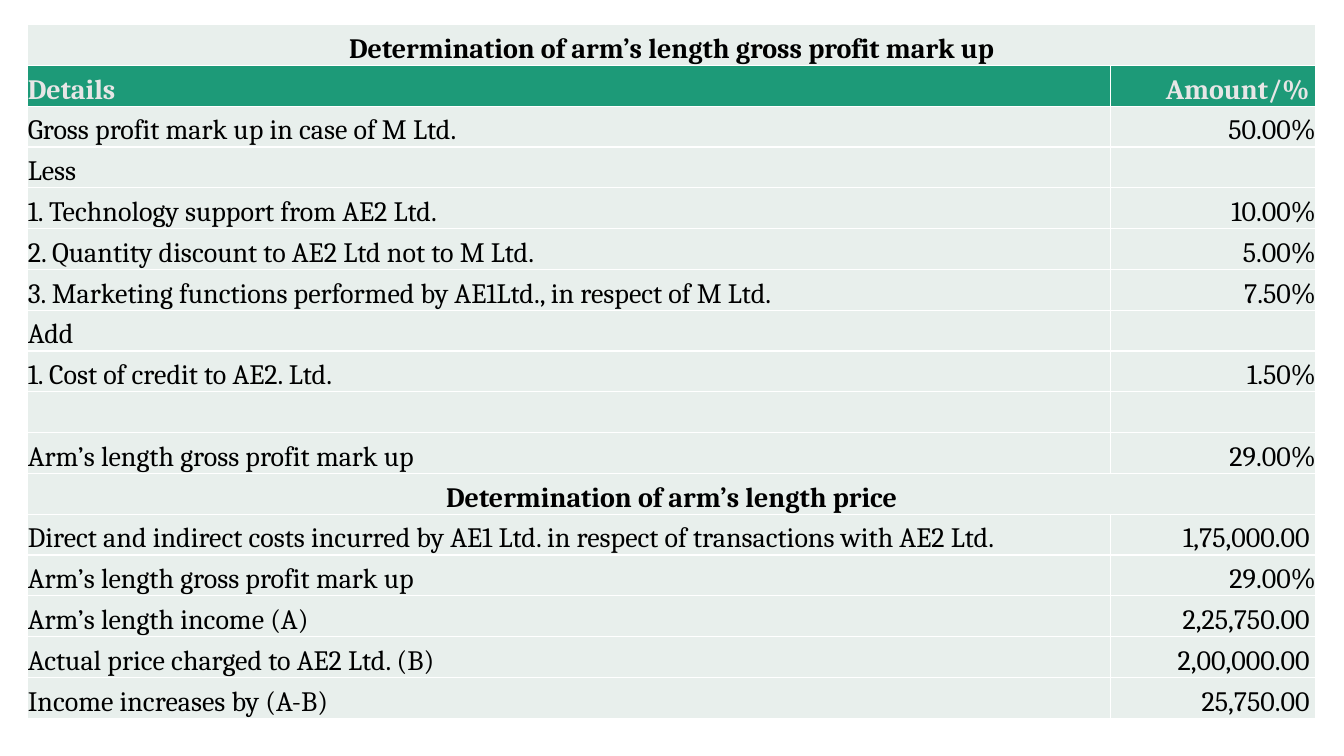
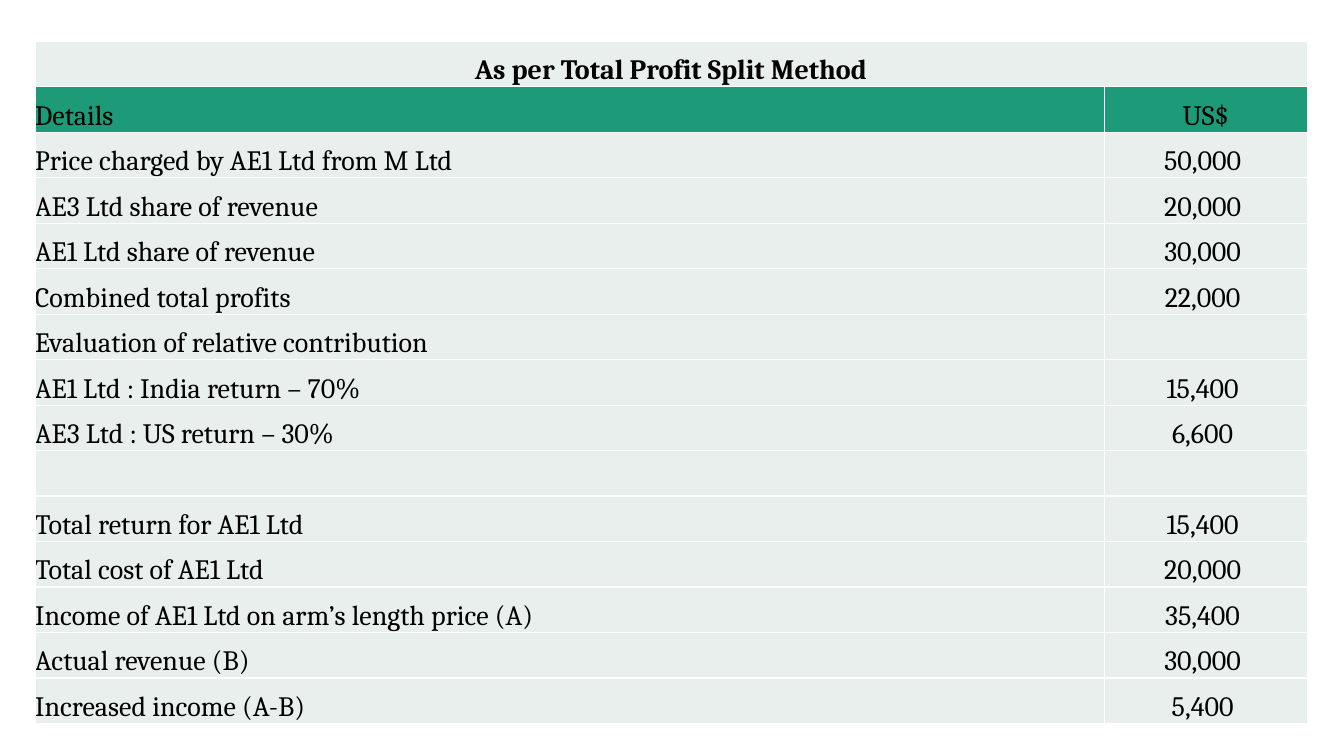
from pptx import Presentation
from pptx.dml.color import RGBColor
from pptx.enum.text import MSO_ANCHOR, PP_ALIGN
from pptx.util import Cm, Pt
from lxml import etree

LEFT, CENTER, RIGHT = PP_ALIGN.LEFT, PP_ALIGN.CENTER, PP_ALIGN.RIGHT
BOTTOM = MSO_ANCHOR.BOTTOM
NS = "http://schemas.openxmlformats.org/drawingml/2006/main"

MARKUP_ROWS = [
    ("Determination of arm’s length gross profit mark up",),
    ("Details", "Amount/% "),
    ("Gross profit mark up in case of M Ltd.", "50.00%"),
    ("Less", ""),
    ("1. Technology support from AE2 Ltd.", "10.00%"),
    ("2. Quantity discount to AE2 Ltd not to M Ltd.", "5.00%"),
    ("3. Marketing functions performed by AE1Ltd., in respect of M Ltd.", "7.50%"),
    ("Add", ""),
    ("1. Cost of credit to AE2. Ltd.", "1.50%"),
    ("", ""),
    ("Arm’s length gross profit mark up", "29.00%"),
    ("Determination of arm’s length price",),
    ("Direct and indirect costs incurred by AE1 Ltd. in respect of "
     "transactions with AE2 Ltd.", "1,75,000.00 "),
    ("Arm’s length gross profit mark up", "29.00%"),
    ("Arm’s length income (A)", "2,25,750.00 "),
    ("Actual price charged to AE2 Ltd. (B)", "2,00,000.00 "),
    ("Income increases by (A-B)", "25,750.00 "),
]

SPLIT_ROWS = [
    ("As per Total Profit Split Method",),
    ("Details", "US$"),
    ("Price charged by AE1 Ltd from M Ltd", "50,000 "),
    ("AE3 Ltd share of revenue", "20,000 "),
    ("AE1 Ltd share of revenue", "30,000 "),
    ("Combined total profits", "22,000 "),
    ("Evaluation of relative contribution", ""),
    ("AE1 Ltd : India return – 70%", "15,400 "),
    ("AE3 Ltd : US return – 30%", "6,600 "),
    ("", ""),
    ("Total return for AE1 Ltd", "15,400 "),
    ("Total cost of AE1 Ltd", "20,000 "),
    ("Income of AE1 Ltd on arm’s length price (A)", "35,400 "),
    ("Actual revenue (B)", "30,000 "),
    ("Increased income (A-B)", "5,400 "),
]


def rgb(value):
    return RGBColor.from_string(value)


class Deck:
    INK, PALE, GREEN, WHITE, GREY = "000000", "E8EFEC", "1D9A78", "FFFFFF", "E7E6E6"
    FONT = {"name": "Cambria", "size": Pt(20)}
    CELL = {"margin_left": 0, "margin_right": 0, "margin_top": 0,
            "margin_bottom": 0, "vertical_anchor": BOTTOM}
    PLAIN = {"first_row": False, "horz_banding": False}

    def __init__(self):
        self.prs = Presentation()
        self.prs.slide_width, self.prs.slide_height = Cm(33.87), Cm(19.05)
        self.s = None

    def slide(self):
        self.s = self.prs.slides.add_slide(self.prs.slide_layouts[6])

    def apply(self, target, values):
        for name, value in values.items():
            setattr(target, name, value)

    def borders(self, cell):
        tc_pr = cell._tc.get_or_add_tcPr()
        for side in ("lnL", "lnR", "lnT", "lnB"):
            line = etree.SubElement(tc_pr, f"{{{NS}}}{side}", w=str(Pt(1)))
            fill = etree.SubElement(line, f"{{{NS}}}solidFill")
            etree.SubElement(fill, f"{{{NS}}}srgbClr", val=self.WHITE)

    def cell(self, cell, text, fill, align, color, bold):
        self.apply(cell, self.CELL)
        self.borders(cell)
        cell.fill.solid()
        cell.fill.fore_color.rgb = rgb(fill)
        if text:
            p = cell.text_frame.paragraphs[0]
            p.alignment = align
            r = p.add_run()
            r.text = text
            self.apply(r.font, {**self.FONT, "bold": bold})
            r.font.color.rgb = rgb(color)

    def table(self, rows, left, top, widths, height, amount_align,
              head_color, head_bold):
        frame = self.s.shapes.add_table(len(rows), len(widths), Cm(left), Cm(top),
                                        Cm(sum(widths)), Cm(height))
        table = frame.table
        self.apply(table, self.PLAIN)
        for column, width in zip(table.columns, widths):
            column.width = Cm(width)
        for i, texts in enumerate(rows):
            table.rows[i].height = Cm(height / len(rows))
            title, head = len(texts) == 1, i == 1
            if title:
                table.cell(i, 0).merge(table.cell(i, len(widths) - 1))
            aligns = (CENTER,) if title else (LEFT, amount_align)
            for j, (text, align) in enumerate(zip(texts, aligns)):
                self.cell(table.cell(i, j), text, self.GREEN if head else self.PALE,
                          align, head_color if head else self.INK,
                          title or (head and head_bold))


def main():
    deck = Deck()
    deck.slide()
    deck.table(MARKUP_ROWS, 0.7, 0.62, (27.28, 5.18), 17.48, RIGHT, deck.GREY, True)
    deck.slide()
    deck.table(SPLIT_ROWS, 0.88, 1.04, (26.95, 5.11), 17.2, CENTER, deck.INK, False)
    deck.prs.save("out.pptx")


if __name__ == "__main__":
    main()
